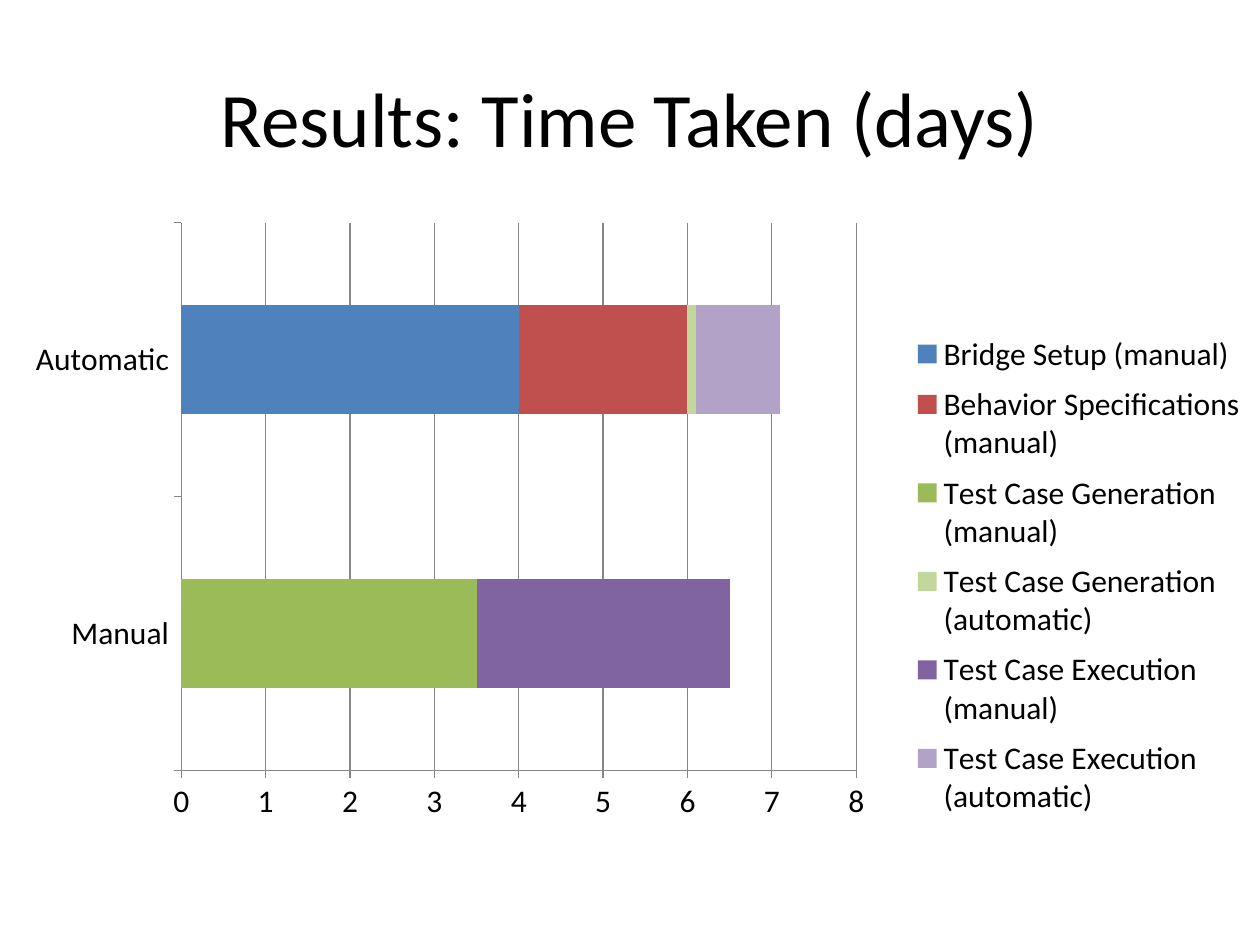
from pptx import Presentation
from pptx.chart.data import CategoryChartData
from pptx.dml.color import RGBColor
from pptx.enum.chart import XL_CHART_TYPE, XL_LEGEND_POSITION, XL_TICK_MARK
from pptx.enum.text import MSO_ANCHOR, PP_ALIGN
from pptx.oxml import parse_xml
from pptx.oxml.ns import nsdecls
from pptx.util import Inches, Pt

BAR_STACKED = XL_CHART_TYPE.BAR_STACKED
RIGHT = XL_LEGEND_POSITION.RIGHT
OUTSIDE = XL_TICK_MARK.OUTSIDE
MIDDLE = MSO_ANCHOR.MIDDLE
CENTER = PP_ALIGN.CENTER

CATEGORIES = ["Manual", "Automatic"]
SERIES = [
    ("Bridge Setup (manual)", (0, 4), "4F81BD"),
    ("Behavior Specifications (manual)", (0, 2), "C0504D"),
    ("Test Case Generation (manual)", (3.5, 0), "9BBB59"),
    ("Test Case Generation (automatic)", (0, 0.1), "C3D69B"),
    ("Test Case Execution (manual)", (3, 0), "8064A2"),
    ("Test Case Execution (automatic)", (0, 1), "B3A2C7"),
]


def rgb(color):
    return RGBColor.from_string(color)


def layout_xml(x, y, w, h, inner=False):
    """Manual chart layout, in fractions of the chart area."""
    target = '<c:layoutTarget val="inner"/>' if inner else ""
    modes = '<c:xMode val="edge"/><c:yMode val="edge"/>'
    sizes = "".join(f'<c:{k} val="{v}"/>' for k, v in zip("xywh", (x, y, w, h)))
    return parse_xml(f'<c:layout {nsdecls("c")}><c:manualLayout>'
                     f'{target}{modes}{sizes}</c:manualLayout></c:layout>')


class Deck:
    font = "Calibri"
    text = "000000"
    line = "868686"

    def __init__(self, prs):
        self.s = prs.slides.add_slide(prs.slide_layouts[5])

    def style(self, font, size):
        font.name = self.font
        font.size = Pt(size)
        font.color.rgb = rgb(self.text)

    def title(self, text, x, y, w, h):
        sp = self.s.shapes.title
        sp.left, sp.top, sp.width, sp.height = map(Inches, (x, y, w, h))
        tf = sp.text_frame
        tf.vertical_anchor = MIDDLE
        p = tf.paragraphs[0]
        p.alignment = CENTER
        r = p.add_run()
        r.text = text
        self.style(r.font, 44)

    def axis(self, axis, grid):
        axis.major_tick_mark = OUTSIDE
        axis.has_major_gridlines = grid
        lines = [axis.format.line]
        if grid:
            lines.append(axis.major_gridlines.format.line)
        for line in lines:
            line.color.rgb = rgb(self.line)
            line.width = Pt(0.75)

    def stacked_bars(self, categories, series, x, y, w, h):
        data = CategoryChartData()
        data.categories = categories
        for name, values, _ in series:
            data.add_series(name, values)
        chart = self.s.shapes.add_chart(
            BAR_STACKED, *map(Inches, (x, y, w, h)), data).chart
        chart.has_title = False
        self.style(chart.font, 18)

        # Bars
        plot = chart.plots[0]
        plot.vary_by_categories = False
        plot.gap_width = 150
        plot.overlap = 100
        for ser, (_, _, color) in zip(plot.series, series):
            ser.format.fill.solid()
            ser.format.fill.fore_color.rgb = rgb(color)

        # Axes
        self.axis(chart.category_axis, False)
        self.axis(chart.value_axis, True)
        chart.value_axis.minimum_scale = 0
        chart.value_axis.maximum_scale = 8
        chart.value_axis.major_unit = 1
        labels = chart.value_axis.tick_labels
        labels.number_format = "General"
        labels.number_format_is_linked = False

        # Legend
        chart.has_legend = True
        legend = chart.legend
        legend.position = RIGHT
        legend.include_in_layout = False

        # Places of plot and legend
        area = chart.element.chart.plotArea
        for old in area.xpath("c:layout"):
            area.remove(old)
        area.insert(0, layout_xml(0.137, 0.02, 0.54, 0.878, inner=True))
        box = chart.element.xpath("c:chart/c:legend")[0]
        for old in box.xpath("c:layout"):
            box.remove(old)
        box.xpath("c:legendPos")[0].addnext(layout_xml(0.71, 0.18, 0.29, 0.81))


def main():
    prs = Presentation()
    prs.slide_width, prs.slide_height = Inches(10), Inches(7.5)
    deck = Deck(prs)
    deck.title("Results: Time Taken (days)", 0.5, 0.3, 9, 1.25)
    deck.stacked_bars(CATEGORIES, SERIES, 0.08, 1.67, 9.92, 4.95)
    prs.save("out.pptx")


if __name__ == "__main__":
    main()
